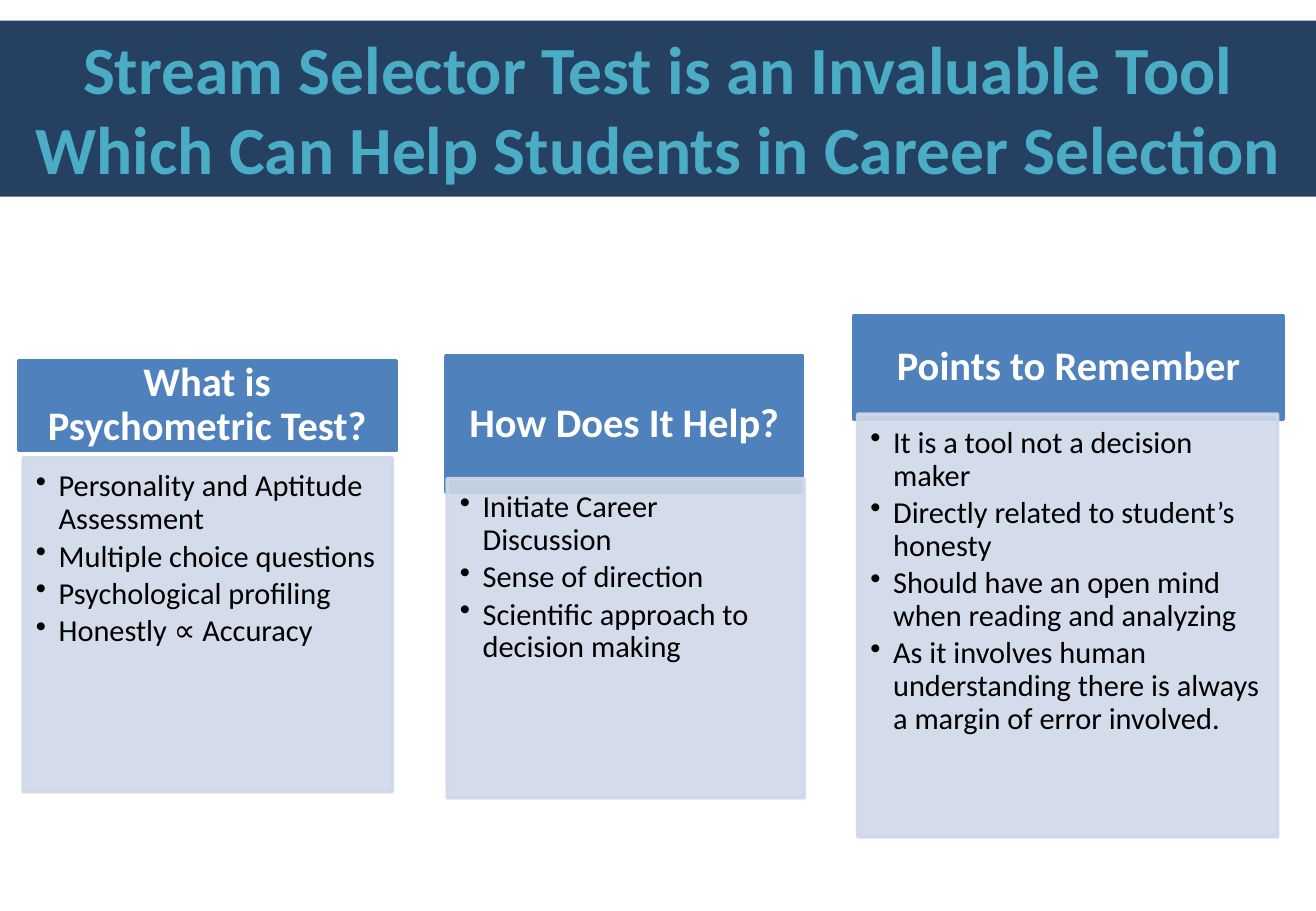
import pptx
import pptx.dml.color
import pptx.enum.shapes
import pptx.enum.text
import pptx.oxml.ns
import pptx.util
from lxml import etree

Pt = pptx.util.Pt
RGBColor = pptx.dml.color.RGBColor
ALIGN = pptx.enum.text.PP_ALIGN
ANCHOR = pptx.enum.text.MSO_ANCHOR
qn = pptx.oxml.ns.qn

NAVY = RGBColor(0x25, 0x40, 0x61)
AQUA = RGBColor(0x4B, 0xAC, 0xC6)
BLUE = RGBColor(0x4F, 0x81, 0xBD)
PALE = RGBColor(0xD0, 0xD8, 0xE8)
WHITE = RGBColor(0xFF, 0xFF, 0xFF)
BLACK = RGBColor(0x00, 0x00, 0x00)

FONT = "Calibri"
INDENT = Pt(13.5)
TITLE = ("Stream Selector Test is an Invaluable Tool "
         "Which Can Help Students in Career Selection")

# Heading, heading box, body box (left, top, width, height in points), bullets
CARDS = [
    ("What is Psychometric Test?",
     (10.8, 213.8, 223.9, 53.3), (13.7, 271.4, 218.9, 198),
     ["Personality and Aptitude Assessment",
      "Multiple choice questions",
      "Psychological profiling",
      "Honestly ∝ Accuracy"]),
    ("How Does It Help?",
     (264.2, 211, 211.7, 80.6), (265, 283.7, 211.7, 189.4),
     ["Initiate Career Discussion",
      "Sense of direction",
      "Scientific approach to decision making"]),
    ("Points to Remember",
     (506.2, 187.2, 254.2, 61.2), (508.3, 245.5, 249.1, 250.6),
     ["It is a tool not a decision maker",
      "Directly related to student’s honesty",
      "Should have an open mind when reading and analyzing",
      "As it involves human understanding there is always "
      "a margin of error involved."]),
]


def add_box(slide, box, color, insets, anchor, outlined=True):
    """Add a filled rectangle; insets are left, top, right, bottom in points."""
    sp = slide.shapes.add_shape(pptx.enum.shapes.MSO_SHAPE.RECTANGLE,
                                *[Pt(v) for v in box])
    sp.shadow.inherit = False
    sp.fill.solid()
    sp.fill.fore_color.rgb = color
    if outlined:
        sp.line.color.rgb = color
        sp.line.width = Pt(2)
    else:
        sp.line.fill.background()
    tf = sp.text_frame
    tf.word_wrap = True
    tf.vertical_anchor = anchor
    tf.margin_left, tf.margin_top, tf.margin_right, tf.margin_bottom = [
        Pt(v) for v in insets]
    return sp


def set_opacity(sp, percent):
    """Make the fill and the outline partly transparent."""
    for clr in sp._element.spPr.iter(qn("a:srgbClr")):
        etree.SubElement(clr, qn("a:alpha")).set("val", str(percent * 1000))


def add_run(p, text, size, color, bold=False):
    r = p.add_run()
    r.text = text
    r.font.name = FONT
    r.font.size = Pt(size)
    r.font.bold = bold
    r.font.color.rgb = color


def add_bullet(p, text):
    pPr = p._p.get_or_add_pPr()
    pPr.set("marL", str(INDENT))
    pPr.set("indent", str(-INDENT))
    etree.SubElement(pPr, qn("a:buChar")).set("char", "•")
    p.level = 1
    p.alignment = ALIGN.LEFT
    p.line_spacing = 0.9
    p.space_after = Pt(2.7)
    add_run(p, text, 18, BLACK)


def add_title(slide):
    sp = add_box(slide, (0, 12.2, 780, 104.4), NAVY, (7.2, 3.6, 7.2, 3.6),
                 ANCHOR.TOP, outlined=False)
    p = sp.text_frame.paragraphs[0]
    p.alignment = ALIGN.CENTER
    add_run(p, TITLE, 40, AQUA, bold=True)


def add_card(slide, heading, head_box, body_box, bullets):
    head = add_box(slide, head_box, BLUE, (13.7, 7.8, 13.7, 7.8), ANCHOR.MIDDLE)
    p = head.text_frame.paragraphs[0]
    p.alignment = ALIGN.CENTER
    p.line_spacing = 0.9
    add_run(p, heading, 24, WHITE, bold=True)

    body = add_box(slide, body_box, PALE, (7.6, 7.6, 10.1, 11.4), ANCHOR.TOP)
    set_opacity(body, 90)
    tf = body.text_frame
    for i, text in enumerate(bullets):
        add_bullet(tf.add_paragraph() if i else tf.paragraphs[0], text)


def main():
    prs = pptx.Presentation()
    prs.slide_width, prs.slide_height = Pt(780), Pt(540)
    slide = prs.slides.add_slide(prs.slide_layouts[6])
    for card in CARDS:
        add_card(slide, *card)
    add_title(slide)
    prs.save("out.pptx")


if __name__ == "__main__":
    main()
